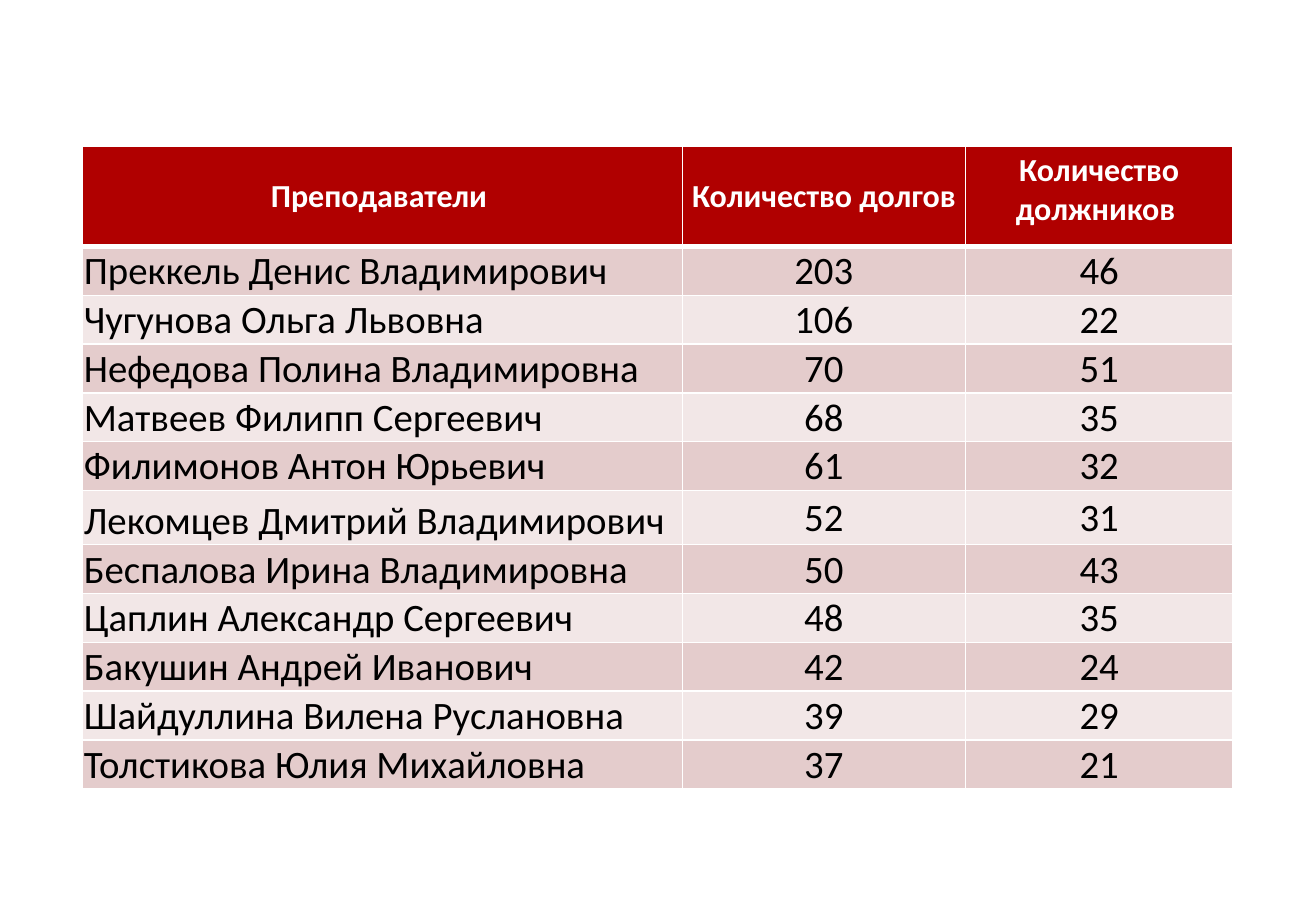
from lxml.etree import SubElement as Sub
from pptx import Presentation
from pptx.dml.color import RGBColor
from pptx.enum.text import MSO_ANCHOR as Anchor, PP_ALIGN as Align
from pptx.oxml.ns import qn
from pptx.util import Pt


def color(code):
    return RGBColor.from_string(code)


def write(cell, text, size=23, ink="000000", bold=False, align=Align.CENTER,
          anchor=Anchor.MIDDLE, pad=(0.7, 0.7, 0.7, 0)):
    cell.vertical_anchor = anchor
    (cell.margin_left, cell.margin_top,
     cell.margin_right, cell.margin_bottom) = map(Pt, pad)
    para = cell.text_frame.paragraphs[0]
    para.alignment = align
    run = para.add_run()
    run.text = text
    font = run.font
    font.name, font.size, font.bold = "Calibri", Pt(size), bold
    font.color.rgb = color(ink)


heads = ["Преподаватели ", "Количество долгов", "Количество должников "]
staff = [
    ("Преккель Денис Владимирович", 203, 46),
    ("Чугунова Ольга Львовна", 106, 22),
    ("Нефедова Полина Владимировна", 70, 51),
    ("Матвеев Филипп Сергеевич", 68, 35),
    ("Филимонов Антон Юрьевич", 61, 32),
    ("Лекомцев Дмитрий Владимирович", 52, 31),
    ("Беспалова Ирина Владимировна", 50, 43),
    ("Цаплин Александр Сергеевич", 48, 35),
    ("Бакушин Андрей Иванович", 42, 24),
    ("Шайдуллина Вилена Руслановна", 39, 29),
    ("Толстикова Юлия Михайловна", 37, 21),
]
widths = [355.5, 167.7, 158.6]
highs = [59.6] + [28.8] * 5 + [32.2] + [28.8] * 5

deck = Presentation()
deck.slide_width, deck.slide_height = Pt(780), Pt(538.5)
slide = deck.slides.add_slide(deck.slide_layouts[6])

# Table grid
table = slide.shapes.add_table(
    len(highs), len(widths), Pt(49), Pt(86.4),
    Pt(sum(widths)), Pt(sum(highs))).table
for col, width in zip(table.columns, widths):
    col.width = Pt(width)
for row, high in zip(table.rows, highs):
    row.height = Pt(high)

# Header text
for c, head in enumerate(heads):
    look = {"size": 19, "ink": "FFFFFF", "bold": True}
    if c == 2:
        look.update(anchor=Anchor.TOP, pad=(5.8, 2.9, 5.8, 2.9))
    write(table.cell(0, c), head, **look)

# Debts by teacher
for r, (name, debts, people) in enumerate(staff, 1):
    write(table.cell(r, 0), name, align=Align.LEFT, anchor=Anchor.BOTTOM)
    write(table.cell(r, 1), str(debts))
    write(table.cell(r, 2), str(people))

# White borders, heavy below the header, and banded fills
for r, row in enumerate(table.rows):
    shade = "B00000" if r == 0 else "E4CCCC" if r % 2 else "F2E7E7"
    thick = {0: "lnB", 1: "lnT"}.get(r)
    for cell in row.cells:
        props = cell._tc.get_or_add_tcPr()
        for side in ("lnL", "lnR", "lnT", "lnB"):
            line = Sub(props, qn(f"a:{side}"), w=str(Pt(3 if side == thick else 1)))
            paint = Sub(line, qn("a:solidFill"))
            Sub(paint, qn("a:srgbClr"), val="FFFFFF")
        cell.fill.solid()
        cell.fill.fore_color.rgb = color(shade)

deck.save("out.pptx")
